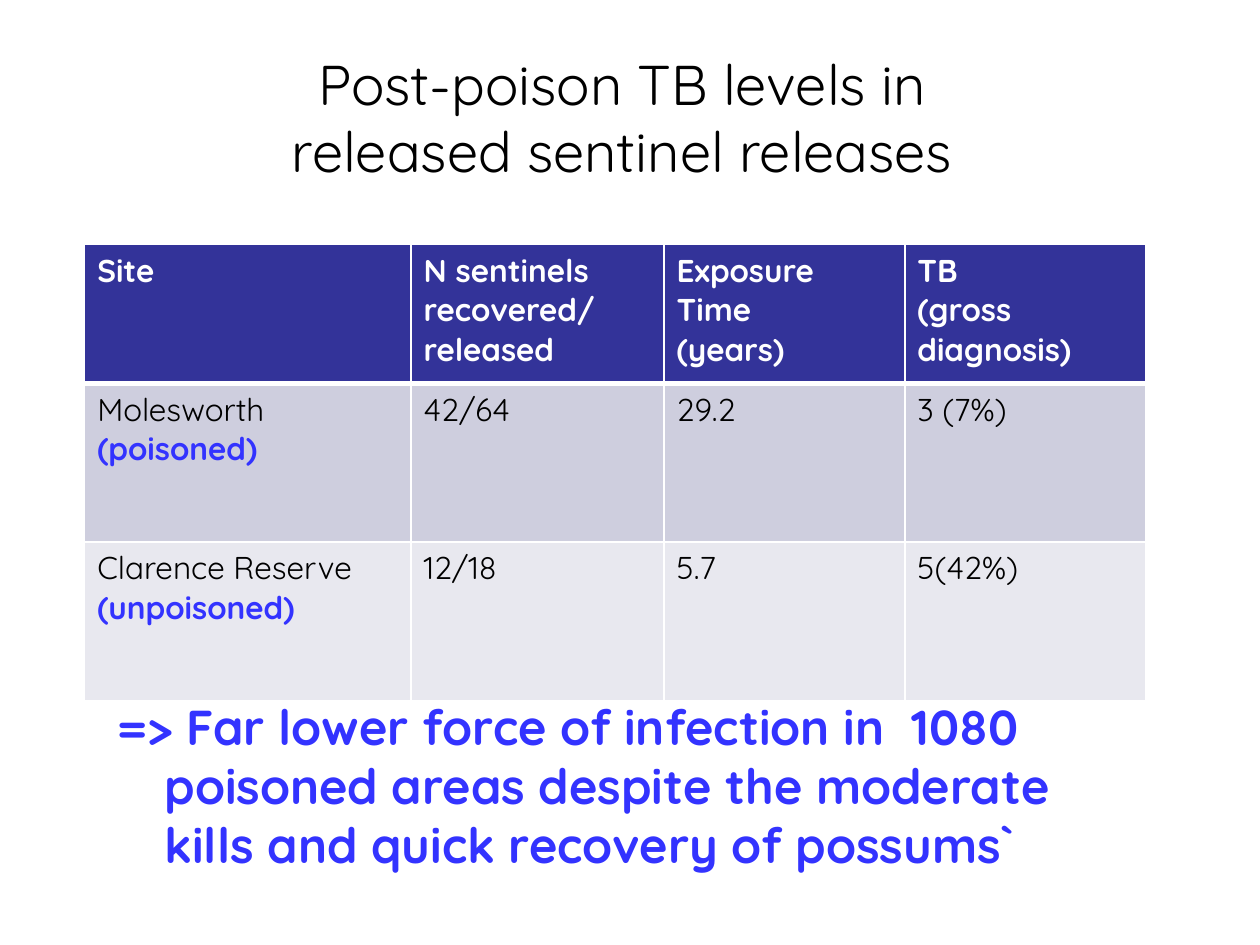
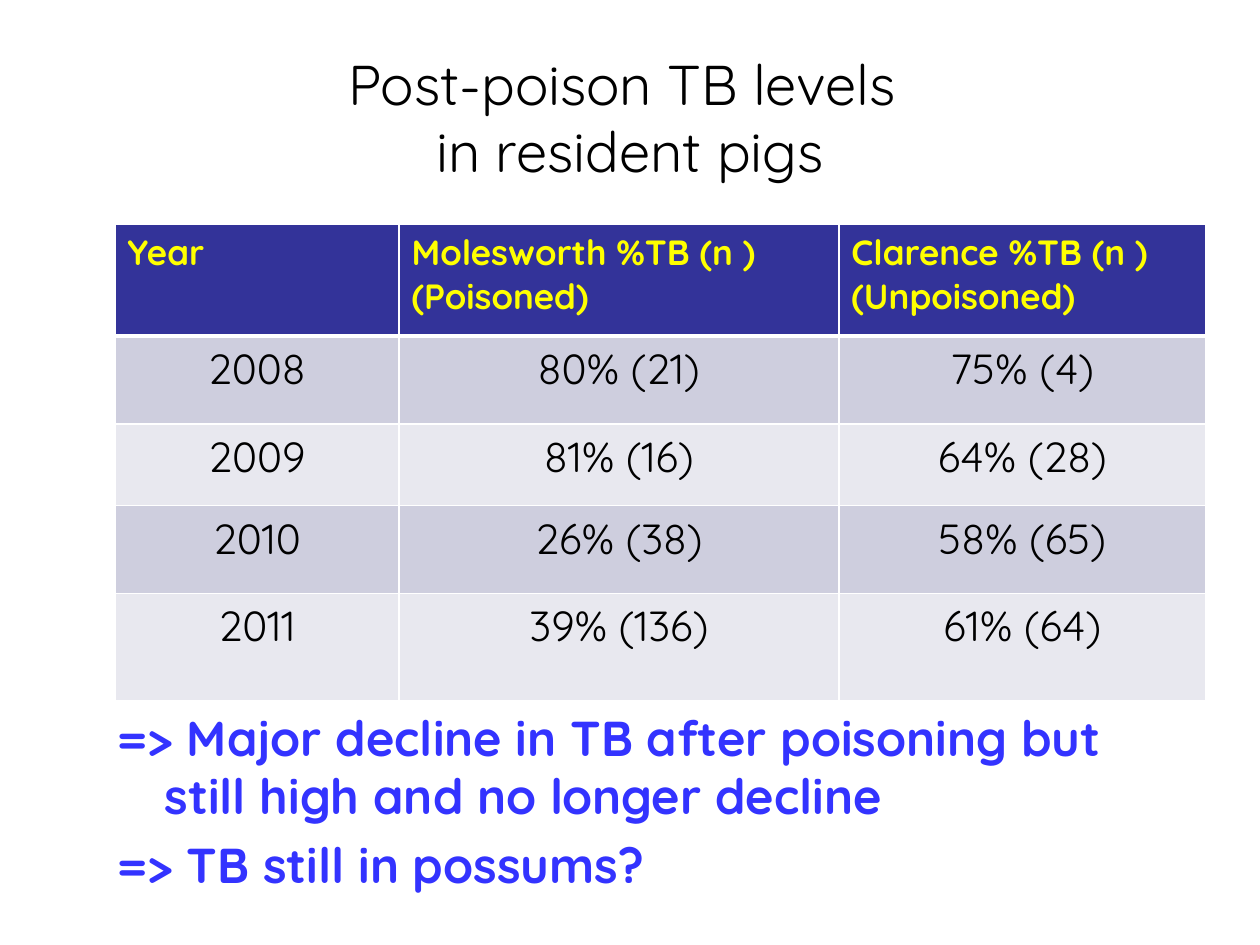
from dataclasses import dataclass
from lxml.etree import SubElement
from pptx import Presentation
from pptx.dml.color import RGBColor
from pptx.enum.text import MSO_ANCHOR, PP_ALIGN
from pptx.oxml.ns import qn
from pptx.util import Pt


@dataclass(frozen=True)
class Theme:
    font: str = "Quicksand"
    black: str = "000000"
    white: str = "FFFFFF"
    yellow: str = "FFFF00"
    accent: str = "3333FF"
    header_fill: str = "333399"
    band_fills: tuple = ("CECEDE", "E8E8EF")
    title_size: int = 32
    conclusion_size: int = 28
    grid_width: int = 1
    header_rule_width: int = 3


THEME = Theme()


@dataclass(frozen=True)
class TableStyle:
    header_color: str
    header_size: int
    body_size: int
    body_alignment: PP_ALIGN


def format_paragraph(paragraph, size, color, bold=False, alignment=None):
    paragraph.alignment = alignment
    for run in paragraph.runs:
        run.font.name = THEME.font
        run.font.size = Pt(size)
        run.font.bold = bold
        run.font.color.rgb = RGBColor.from_string(color)


def place(shape, left, top, width, height):
    shape.left, shape.top = Pt(left), Pt(top)
    shape.width, shape.height = Pt(width), Pt(height)


def add_title(slide, text):
    title = slide.shapes.title
    place(title, 36, 21.6, 648, 90)
    title.text_frame.text = text
    title.text_frame.vertical_anchor = MSO_ANCHOR.MIDDLE
    for paragraph in title.text_frame.paragraphs:
        format_paragraph(paragraph, THEME.title_size, THEME.black, alignment=PP_ALIGN.CENTER)


def add_conclusions(slide, top, text):
    body = slide.placeholders[1]
    place(body, 59.8, top, 589.7, 124.6)
    body.text_frame.text = text
    for paragraph in body.text_frame.paragraphs:
        format_paragraph(paragraph, THEME.conclusion_size, THEME.accent, bold=True)
        SubElement(paragraph._p.get_or_add_pPr(), qn("a:buNone"))


def set_borders(cell, row_index):
    rule_side = {0: "lnB", 1: "lnT"}.get(row_index)
    properties = cell._tc.get_or_add_tcPr()
    for side in ("lnL", "lnR", "lnT", "lnB"):
        width = THEME.header_rule_width if side == rule_side else THEME.grid_width
        line = SubElement(properties, qn(f"a:{side}"), w=str(Pt(width)))
        fill = SubElement(line, qn("a:solidFill"))
        SubElement(fill, qn("a:srgbClr"), val=THEME.white)


def fill_cell(cell, text, row_index, style):
    set_borders(cell, row_index)
    is_header = row_index == 0
    fill = THEME.header_fill if is_header else THEME.band_fills[(row_index - 1) % 2]
    cell.fill.solid()
    cell.fill.fore_color.rgb = RGBColor.from_string(fill)
    cell.text_frame.text = text
    for paragraph in cell.text_frame.paragraphs:
        if is_header:
            format_paragraph(paragraph, style.header_size, style.header_color, bold=True)
        elif paragraph.text.startswith("("):
            format_paragraph(paragraph, style.body_size, THEME.accent, True, style.body_alignment)
        else:
            format_paragraph(paragraph, style.body_size, THEME.black, False, style.body_alignment)


def add_results_table(slide, left, top, column_widths, row_heights, rows, style):
    frame = slide.shapes.add_table(
        len(rows), len(column_widths), Pt(left), Pt(top),
        Pt(sum(column_widths)), Pt(sum(row_heights)))
    table = frame.table
    for column, width in zip(table.columns, column_widths):
        column.width = Pt(width)
    for row_index, (row, height, texts) in enumerate(zip(table.rows, row_heights, rows)):
        row.height = Pt(height)
        for cell, text in zip(row.cells, texts):
            fill_cell(cell, text, row_index, style)


def add_content_slide(presentation, title):
    slide = presentation.slides.add_slide(presentation.slide_layouts[1])
    add_title(slide, title)
    return slide


def add_sentinel_slide(presentation):
    slide = add_content_slide(
        presentation, "Post-poison TB levels in \vreleased sentinel releases ")
    add_results_table(
        slide, 48.4, 139.8, (186.5, 144.6, 137.6, 137.6), (79.2, 90.6, 90.6),
        (
            ("Site", "N sentinels recovered/\nreleased",
             "Exposure Time\n(years)", "TB\n(gross diagnosis)"),
            ("Molesworth\n(poisoned)", "42/64", "29.2", "3 (7%)"),
            ("Clarence Reserve\n(unpoisoned)", "12/18", "5.7", "5(42%)"),
        ),
        TableStyle(THEME.white, 18, 18, PP_ALIGN.LEFT))
    add_conclusions(
        slide, 394.6,
        "=> Far lower force of infection in  1080 poisoned areas despite "
        "the moderate kills and quick recovery of possums`")


def add_pig_slide(presentation):
    slide = add_content_slide(presentation, "Post-poison TB levels \vin resident pigs")
    add_results_table(
        slide, 65.6, 128.2, (162.4, 251.4, 209.6), (63.8, 50.2, 46.8, 50.2, 61.2),
        (
            ("Year", "Molesworth %TB (n )\n(Poisoned)", "Clarence %TB (n )\n(Unpoisoned)"),
            ("2008", "80% (21)", "75% (4)"),
            ("2009", "81% (16)", "64% (28)"),
            ("2010", "26% (38)", "58% (65)"),
            ("2011", "39% (136)", "61% (64)"),
        ),
        TableStyle(THEME.yellow, 20, 24, PP_ALIGN.CENTER))
    add_conclusions(
        slide, 400.4,
        "=> Major decline in TB after poisoning but still high and no longer decline\n"
        "=> TB still in possums?")


def main():
    presentation = Presentation()
    presentation.slide_width, presentation.slide_height = Pt(720), Pt(540)
    add_sentinel_slide(presentation)
    add_pig_slide(presentation)
    presentation.save("out.pptx")


if __name__ == "__main__":
    main()
